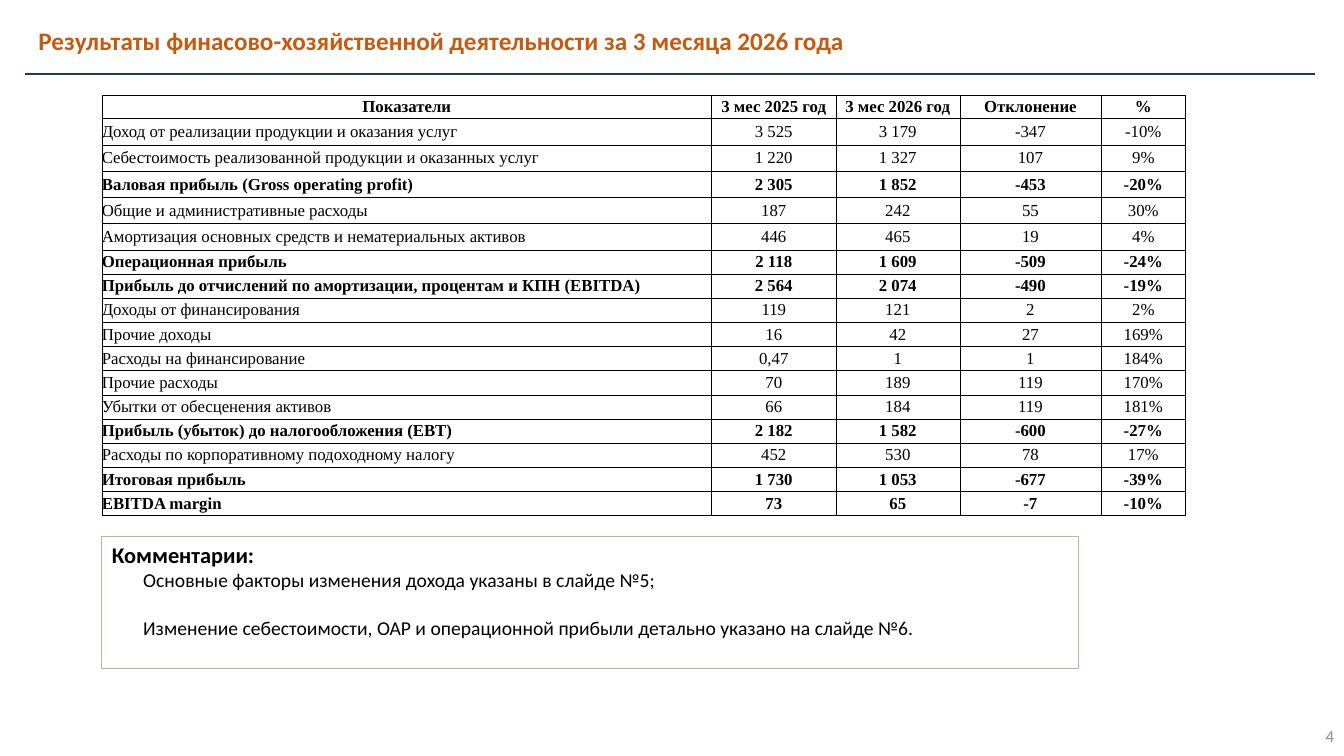
from lxml import etree
from pptx import Presentation
from pptx.dml.color import RGBColor
from pptx.enum import text as t
from pptx.oxml import ns
from pptx.util import Inches, Pt

HUES = {"title": "C55A11", "rule": "203864", "frame": "C6B298",
        "ink": "000000", "page": "8C8C8C"}
SANS = "Calibri"
SERIF = "Times New Roman"
COLS = [6.05, 1.23, 1.23, 1.4, 0.84]
TALL = [0.22, 0.27] + [0.26] * 4 + [0.24] * 11
BOLD = {0, 3, 6, 7, 13, 15, 16}
ROWS = [
    ("Показатели", "3 мес 2025 год", "3 мес 2026 год", "Отклонение", "%"),
    ("Доход от реализации продукции и оказания услуг", "3 525", "3 179", "-347", "-10%"),
    ("Себестоимость реализованной продукции и оказанных услуг", "1 220", "1 327", "107", "9%"),
    ("Валовая прибыль (Gross operating profit)", "2 305", "1 852", "-453", "-20%"),
    ("Общие и административные расходы", "187", "242", "55", "30%"),
    ("Амортизация основных средств и нематериальных активов", "446", "465", "19", "4%"),
    ("Операционная прибыль", "2 118", "1 609", "-509", "-24%"),
    ("Прибыль до отчислений по амортизации, процентам и КПН (EBITDA)",
     "2 564", "2 074", "-490", "-19%"),
    ("Доходы от финансирования", "119", "121", "2", "2%"),
    ("Прочие доходы", "16", "42", "27", "169%"),
    ("Расходы на финансирование", "0,47", "1", "1", "184%"),
    ("Прочие расходы", "70", "189", "119", "170%"),
    ("Убытки от обесценения активов", "66", "184", "119", "181%"),
    ("Прибыль (убыток) до налогообложения (ЕВТ)", "2 182", "1 582", "-600", "-27%"),
    ("Расходы по корпоративному подоходному налогу", "452", "530", "78", "17%"),
    ("Итоговая прибыль", "1 730", "1 053", "-677", "-39%"),
    ("EBITDA margin", "73", "65", "-7", "-10%"),
]
NOTES = [
    ("Комментарии:", 16, 0, 0),
    ("Основные факторы изменения дохода указаны в слайде №5;", 14, 0.31, 0),
    ("Изменение себестоимости, ОАР и операционной прибыли детально указано на слайде №6.",
     14, 0.31, 17),
]


def apply(thing, style):
    for name, value in style.items():
        setattr(thing, name, value)


def place(shape, box):
    names = ("left", "top", "width", "height")
    apply(shape, dict(zip(names, map(Inches, box))))


def write(para, words, size, hue, face=SANS, bold=False, align=t.PP_ALIGN.LEFT):
    para.text = words
    para.alignment = align
    apply(para.font, {"name": face, "size": Pt(size), "bold": bold})
    para.font.color.rgb = RGBColor.from_string(HUES[hue])


def add_head(slide, box):
    title = slide.shapes.title
    place(title, box)
    frame = title.text_frame
    apply(frame, {"auto_size": t.MSO_AUTO_SIZE.NONE, "word_wrap": True,
                  "vertical_anchor": t.MSO_ANCHOR.MIDDLE})
    para = frame.paragraphs[0]
    write(para, "Результаты финасово-хозяйственной деятельности за 3 месяца 2026 года",
          18, "title", bold=True)
    para.line_spacing = 0.9
    left, top, width, height = box
    x, y = left - 0.03, top + height + 0.14
    rule = slide.shapes.add_connector(1, *map(Inches, (x, y, x + 12.79, y)))
    rule.line.color.rgb = RGBColor.from_string(HUES["rule"])
    rule.line.width = Pt(1.5)
    etree.SubElement(rule._element.spPr, ns.qn("a:effectLst"))


def add_edges(cell):
    props = cell._tc.get_or_add_tcPr()
    for side in ("lnL", "lnR", "lnT", "lnB"):
        edge = etree.SubElement(props, ns.qn("a:" + side), w=str(Pt(0.5)))
        fill = etree.SubElement(edge, ns.qn("a:solidFill"))
        etree.SubElement(fill, ns.qn("a:srgbClr"), val=HUES["ink"])


def add_grid(slide, box):
    table = slide.shapes.add_table(len(ROWS), len(COLS), *map(Inches, box)).table
    apply(table, {"first_row": False, "horz_banding": False})
    for col, width in zip(table.columns, COLS):
        col.width = Inches(width)
    for i, row in enumerate(ROWS):
        table.rows[i].height = Inches(TALL[i])
        for j, words in enumerate(row):
            cell = table.cell(i, j)
            apply(cell, {"margin_left": 0, "margin_right": 0, "margin_top": 0,
                         "margin_bottom": 0, "vertical_anchor": t.MSO_ANCHOR.MIDDLE})
            add_edges(cell)
            cell.fill.background()
            align = t.PP_ALIGN.LEFT if i and not j else t.PP_ALIGN.CENTER
            write(cell.text_frame.paragraphs[0], words, 12, "ink", SERIF, i in BOLD, align)


def add_notes(slide, box):
    body = slide.placeholders[1]
    place(body, box)
    body.line.color.rgb = RGBColor.from_string(HUES["frame"])
    body.line.width = Pt(0.75)
    frame = body.text_frame
    apply(frame, {"auto_size": t.MSO_AUTO_SIZE.NONE, "word_wrap": True,
                  "vertical_anchor": t.MSO_ANCHOR.TOP})
    for i, (words, size, inset, gap) in enumerate(NOTES):
        para = frame.add_paragraph() if i else frame.paragraphs[0]
        props = para._p.get_or_add_pPr()
        props.set("marL", str(Inches(inset)))
        props.set("indent", "0")
        etree.SubElement(props, ns.qn("a:buNone"))
        write(para, words, size, "ink", bold=i == 0, align=t.PP_ALIGN.JUSTIFY)
        para.space_before = Pt(gap)


def add_page(slide, box):
    frame = slide.shapes.add_textbox(*map(Inches, box)).text_frame
    apply(frame, {"word_wrap": True, "vertical_anchor": t.MSO_ANCHOR.MIDDLE})
    write(frame.paragraphs[0], "4", 12, "page", align=t.PP_ALIGN.RIGHT)


def main():
    deck = Presentation()
    apply(deck, {"slide_width": Inches(13.33), "slide_height": Inches(7.5)})
    slide = deck.slides.add_slide(deck.slide_layouts[1])
    add_head(slide, (0.28, 0.25, 10.05, 0.34))
    add_page(slide, (10.33, 7.1, 3, 0.4))
    add_notes(slide, (1.01, 5.32, 9.69, 1.31))
    add_grid(slide, (1.01, 0.95, sum(COLS), sum(TALL)))
    deck.save("out.pptx")


if __name__ == "__main__":
    main()
